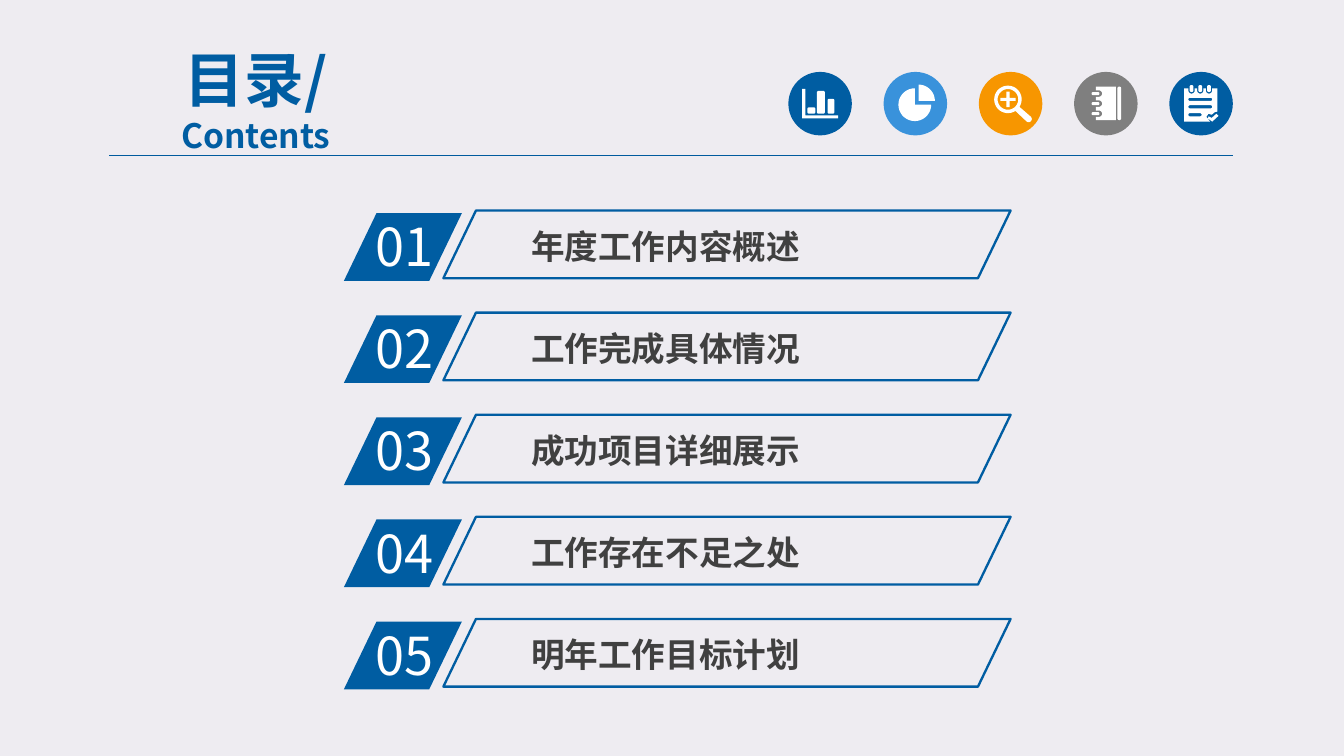
from dataclasses import dataclass
from math import cos, radians, sin

from pptx import Presentation
from pptx import util as u
from pptx.dml.color import RGBColor
from pptx.enum import shapes, text
from pptx.oxml.ns import qn

COLORS = {
    "background": "EEECF1", "blue": "005DA2", "rule": "005B9E",
    "sky": "3992DB", "orange": "F79600", "gray": "7F7F7F",
    "dark": "404040", "white": "FFFFFF",
}
FONT = "Noto Sans CJK SC"
ROW_PITCH = 1.93
BADGE_PITCH = 1.8
BADGE_SIZE = 1.2
SLANT = 0.482

Point = tuple[float, float]
Outline = list[Point]


@dataclass
class Box:
    """Place and size in centimetres."""
    left: float
    top: float
    width: float
    height: float

    def lengths(self) -> list[u.Length]:
        return [u.Cm(v) for v in (self.left, self.top, self.width, self.height)]


@dataclass
class Style:
    size: int
    color: str
    bold: bool = False


@dataclass
class Badge:
    color: str
    icon: list[Outline]


def rgb(name: str) -> RGBColor:
    return RGBColor.from_string(COLORS[name])


# Icon outlines, in millimetres from the badge centre
def arc(x: float, y: float, radius: float, start: int, end: int) -> Outline:
    steps = max(4, (end - start) // 10)
    angles = [radians(start + (end - start) * i / steps) for i in range(steps + 1)]
    return [(x + radius * cos(a), y + radius * sin(a)) for a in angles]


def bar(left: float, top: float, right: float, bottom: float, radius: float = 0.3) -> Outline:
    r = radius
    return (arc(left + r, top + r, r, 180, 270) + arc(right - r, top + r, r, 270, 360)
            + arc(right - r, bottom - r, r, 0, 90) + arc(left + r, bottom - r, r, 90, 180))


def bar_chart_icon() -> list[Outline]:
    axes = [(-3.4, -2.8), (-2.8, -2.8), (-2.8, 2.2), (3.4, 2.2), (3.4, 2.8), (-3.4, 2.8)]
    return [axes, bar(-2.4, 0.7, -0.9, 1.9), bar(-0.6, -2.4, 0.9, 1.9), bar(1.4, -0.9, 2.7, 1.9)]


def pie_icon() -> list[Outline]:
    return [[(-0.1, 0.2)] + arc(-0.1, 0.2, 3.1, 0, 270),
            [(0.6, -0.5)] + arc(0.6, -0.5, 3.1, 270, 360)]


def magnifier_icon() -> list[Outline]:
    x, y, arm, half = -0.5, -0.8, 1.45, 0.3
    body = arc(x, y, 2.6, 57, 393) + arc(3.4, 2.9, 0.6, -45, 135)
    plus = [(-half, -arm), (half, -arm), (half, -half), (arm, -half), (arm, half), (half, half),
            (half, arm), (-half, arm), (-half, half), (-arm, half), (-arm, -half), (-half, -half)]
    return [body, arc(x, y, 1.95, 0, 360), [(x + dx, y + dy) for dx, dy in plus]]


def notebook_icon() -> list[Outline]:
    ring_rows = (1.9, 0, -1.9)
    cover = [(-1.9, -3.2), (1.9, -3.2), (1.9, 3.1), (-1.9, 3.1)]
    for y in ring_rows:
        cover += [(-1.9, y + 0.6)] + arc(-1.3, y, 0.6, -90, 90)[::-1] + [(-1.9, y - 0.6)]
    rings = [bar(-2.7, y - 0.3, -1.2, y + 0.3) for y in ring_rows]
    return [cover, bar(2.2, -3.2, 2.9, 3.1)] + rings


def checklist_icon() -> list[Outline]:
    ring_columns = (-1.8, -0.15, 1.5)
    page = [(-3.2, -2.9)]
    for x in ring_columns:
        page += [(x - 0.6, -2.9)] + arc(x, -2.5, 0.6, 0, 180)[::-1] + [(x + 0.6, -2.9)]
    page += [(3.1, -2.9), (3.1, 1.5), (2.6, 1.6), (2.0, 2.1), (1.4, 1.9),
             (1.0, 2.5), (1.7, 3.4), (-3.2, 3.4)]
    rings = [bar(x - 0.35, -3.5, x + 0.35, -2.2) for x in ring_columns]
    lines = [bar(-2.4, y - 0.3, right, y + 0.3)
             for y, right in ((-0.8, 2.1), (0.6, 2.1), (2.1, 0.1))]
    tick = [(1.4, 2.4), (2.0, 2.7), (2.9, 1.9), (3.3, 2.3), (2.1, 3.4), (1.3, 2.8)]
    return [page, tick] + rings + lines


def paint(shape, fill: str | None = None, line: str | None = None) -> None:
    shape.shadow.inherit = False
    if fill:
        shape.fill.solid()
        shape.fill.fore_color.rgb = rgb(fill)
    else:
        shape.fill.background()
    if line:
        shape.line.color.rgb = rgb(line)
        shape.line.width = u.Pt(1.25)
    else:
        shape.line.fill.background()


def add_run(paragraph, words: str, style: Style) -> None:
    run = paragraph.add_run()
    run.text = words
    run.font.size = u.Pt(style.size)
    run.font.bold = style.bold
    run.font.color.rgb = rgb(style.color)
    run.font.name = FONT
    run.font._element.get_or_add_latin().addnext(
        run.font._element.makeelement(qn("a:ea"), {"typeface": FONT}))


def add_text_box(slide, box: Box):
    frame = slide.shapes.add_textbox(*box.lengths()).text_frame
    frame.word_wrap = True
    return frame


def add_parallelogram(slide, box: Box, fill: str | None = None, line: str | None = None) -> None:
    shape = slide.shapes.add_shape(shapes.MSO_SHAPE.PARALLELOGRAM, *box.lengths())
    shape.adjustments[0] = SLANT
    paint(shape, fill, line)


def add_header(slide) -> None:
    frame = add_text_box(slide, Box(1.7, 1.19, 6.27, 1.37))
    frame.vertical_anchor = text.MSO_ANCHOR.MIDDLE
    paragraph = frame.paragraphs[0]
    paragraph.alignment = text.PP_ALIGN.CENTER
    add_run(paragraph, "目录/", Style(32, "blue", True))
    paragraph.add_line_break()
    add_run(paragraph, "Contents", Style(18, "blue", True))
    rule = slide.shapes.add_connector(shapes.MSO_CONNECTOR.STRAIGHT,
                                      u.Cm(2.06), u.Cm(2.94), u.Cm(23.3), u.Cm(2.94))
    rule.line.color.rgb = rgb("rule")
    rule.line.width = u.Pt(0.75)
    properties = rule._element.spPr
    properties.append(properties.makeelement(qn("a:effectLst"), {}))


def add_row(slide, index: int, title: str) -> None:
    offset = index * ROW_PITCH
    add_parallelogram(slide, Box(6.5, 4.03 + offset, 2.23, 1.28), fill="blue")
    number = add_text_box(slide, Box(6.85, 3.93 + offset, 2.13, 1.45))
    add_run(number.paragraphs[0], f"{index + 1:02}", Style(28, "white"))
    label = add_text_box(slide, Box(9.86, 4.17 + offset, 7.85, 0.97))
    label.margin_left = label.margin_right = u.Cm(0.18)
    label.margin_top = label.margin_bottom = u.Cm(0.1)
    add_run(label.paragraphs[0], title, Style(18, "dark", True))
    add_parallelogram(slide, Box(8.38, 3.98 + offset, 10.72, 1.28), line="blue")


def add_badge(slide, index: int, badge: Badge) -> None:
    box = Box(14.9 + index * BADGE_PITCH, 1.36, BADGE_SIZE, BADGE_SIZE)
    paint(slide.shapes.add_shape(shapes.MSO_SHAPE.OVAL, *box.lengths()), badge.color)
    center_x, center_y = box.left + BADGE_SIZE / 2, box.top + BADGE_SIZE / 2
    outlines = [[(u.Cm(center_x + x / 10), u.Cm(center_y + y / 10)) for x, y in outline]
                for outline in badge.icon]
    builder = slide.shapes.build_freeform(*outlines[0][0])
    for outline in outlines:
        builder.move_to(*outline[0])
        builder.add_line_segments(outline[1:], close=True)
    paint(builder.convert_to_shape(), "white")


def main() -> None:
    presentation = Presentation()
    presentation.slide_width, presentation.slide_height = u.Cm(25.4), u.Cm(14.29)
    slide = presentation.slides.add_slide(presentation.slide_layouts[6])
    slide.background.fill.solid()
    slide.background.fill.fore_color.rgb = rgb("background")
    add_header(slide)
    # Contents list
    titles = ["年度工作内容概述", "工作完成具体情况", "成功项目详细展示",
              "工作存在不足之处", "明年工作目标计划"]
    for index, title in enumerate(titles):
        add_row(slide, index, title)
    # Icon badges
    badges = [Badge("blue", bar_chart_icon()), Badge("sky", pie_icon()),
              Badge("orange", magnifier_icon()), Badge("gray", notebook_icon()),
              Badge("blue", checklist_icon())]
    for index, badge in enumerate(badges):
        add_badge(slide, index, badge)
    presentation.save("out.pptx")


if __name__ == "__main__":
    main()
